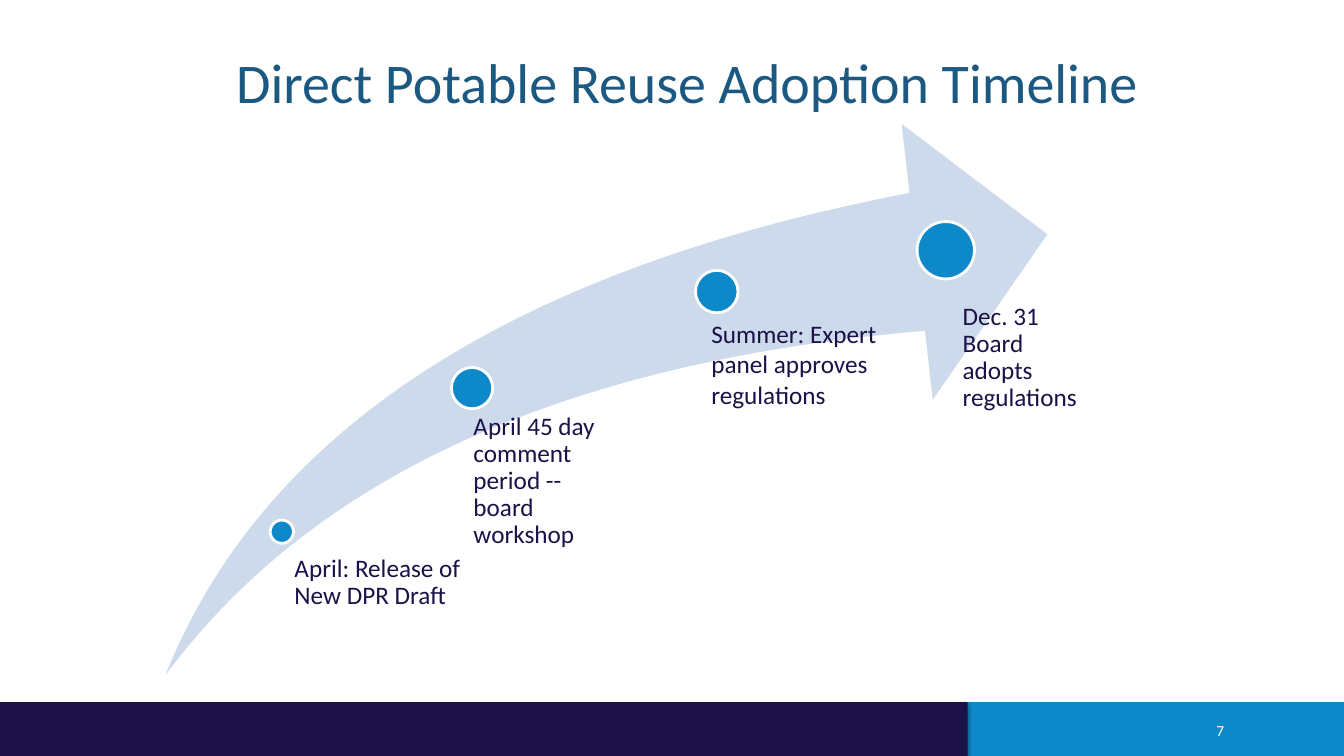
from lxml.etree import SubElement
from pptx import Presentation
from pptx.dml.color import RGBColor
from pptx.enum.shapes import MSO_SHAPE
from pptx.enum.text import MSO_ANCHOR, MSO_AUTO_SIZE, PP_ALIGN
from pptx.oxml.ns import qn
from pptx.util import Pt

# Content
TITLE = "Direct Potable Reuse Adoption Timeline"
PAGE = "7"
NAVY, BLUE, PALE, TEAL, WHITE = "1C1148", "0D88C8", "CCDAEB", "1C5982", "FFFFFF"

# Footer bars: left, width, colour
BARS = [(690.5, 270, BLUE), (0, 691.2, NAVY)]

# Milestones: dot centre x, y, size; label text, box, left and top inset, spacing
STEPS = [
    ((201.3, 379.8, 16.6), "April: Release of New DPR Draft",
     (201.6, 396.7, 129.6, 82.8), (8.8, 0), 0.9),
    ((337.2, 277.2, 29.5), "April 45 day comment period -- board workshop",
     (322.6, 295.2, 114.5, 174.2), (15.6, 0), 0.9),
    ((512, 208.3, 30.4), "Summer: Expert panel approves regulations",
     (501.1, 223.9, 134.6, 72.7), (7.2, 3.6), 1),
    ((675.6, 178.8, 41), "Dec. 31 Board adopts regulations",
     (666, 216.7, 111.6, 82.8), (21.6, 0), 0.9),
]


def tint(color):
    return RGBColor.from_string(color)


def write(shape, text, size=18, color=NAVY, align=PP_ALIGN.LEFT,
          anchor=MSO_ANCHOR.TOP, inset=(0, 0, 0, 0), spacing=1):
    frame = shape.text_frame
    frame.word_wrap = True
    frame.auto_size = MSO_AUTO_SIZE.NONE
    frame.vertical_anchor = anchor
    (frame.margin_left, frame.margin_top,
     frame.margin_right, frame.margin_bottom) = map(Pt, inset)
    frame.text = text
    para = frame.paragraphs[0]
    para.alignment = align
    para.line_spacing = spacing
    para.font.name = "Calibri"
    para.font.size = Pt(size)
    para.font.color.rgb = tint(color)


def draw(kind, box, fill, line=None):
    shape = slide.shapes.add_shape(kind, *map(Pt, box))
    shape.shadow.inherit = False
    shape.fill.solid()
    shape.fill.fore_color.rgb = tint(fill)
    if line:
        shape.line.color.rgb = tint(line)
        shape.line.width = Pt(2)
    else:
        shape.line.fill.background()
    return shape


def shade(shape):
    effects = shape.element.spPr.find(qn("a:effectLst"))
    outer = SubElement(effects, qn("a:outerShdw"), blurRad=str(Pt(3.1)),
                       dist=str(Pt(1.8)), dir="5400000", rotWithShape="0")
    black = SubElement(outer, qn("a:srgbClr"), val="000000")
    SubElement(black, qn("a:alpha"), val="35000")


deck = Presentation()
deck.slide_width, deck.slide_height = Pt(960), Pt(540)
slide = deck.slides.add_slide(deck.slide_layouts[5])

# Footer
for left, width, color in BARS:
    shade(draw(MSO_SHAPE.RECTANGLE, (left, 501.5, width, 38.5), color))
page = slide.shapes.add_textbox(Pt(855.4), Pt(512.6), Pt(32.4), Pt(18))
write(page, PAGE, size=11, color=WHITE, align=PP_ALIGN.CENTER,
      anchor=MSO_ANCHOR.MIDDLE)

# Title
title = slide.shapes.title
title.left, title.top, title.width, title.height = map(Pt, (159.1, 13, 701.3, 90))
write(title, TITLE, size=40, color=TEAL, anchor=MSO_ANCHOR.MIDDLE,
      inset=(9.6, 4.8, 9.6, 4.8))

# Rising arrow
arrow = draw(MSO_SHAPE.SWOOSH_ARROW, (118.1, 88.6, 630, 393.8), PALE)
arrow.adjustments[0] = arrow.adjustments[1] = 0.25

# Milestones
for (x, y, size), text, box, (left, top), spacing in STEPS:
    draw(MSO_SHAPE.OVAL, (x - size / 2, y - size / 2, size, size), BLUE, WHITE)
    label = slide.shapes.add_textbox(*map(Pt, box))
    write(label, text, inset=(left, top, 0, 0), spacing=spacing)

deck.save("out.pptx")
